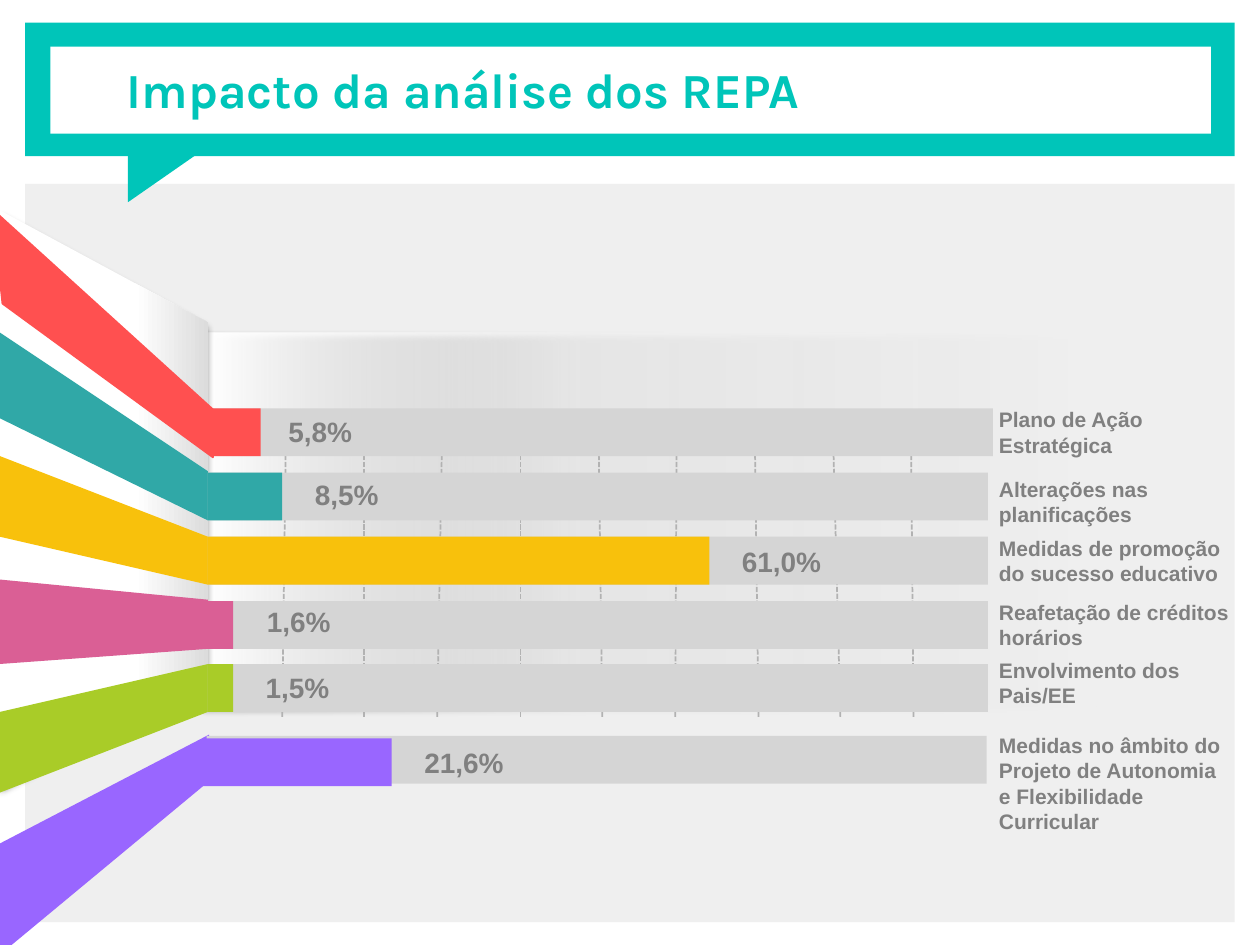
from collections import namedtuple
from dataclasses import dataclass

from lxml.etree import SubElement
from pptx import Presentation
from pptx.dml.color import RGBColor
from pptx.enum.dml import MSO_LINE
from pptx.enum.shapes import MSO_CONNECTOR, MSO_SHAPE
from pptx.enum.text import MSO_ANCHOR
from pptx.oxml import parse_xml
from pptx.oxml.ns import nsdecls, qn
from pptx.util import Inches, Pt


@dataclass(frozen=True)
class Theme:
    teal: str = "00C5B9"
    white: str = "FFFFFF"
    panel: str = "EFEFEF"
    track: str = "D5D5D5"
    fold: str = "DCDCDC"
    grid: str = "B2B2B2"
    text: str = "808080"
    title_font: str = "Karla"
    body_font: str = "Arial"
    title_size: int = 28
    value_size: int = 16
    label_size: int = 12


Row = namedtuple("Row", "label label_box value value_box color track bar ribbon")

BAR_HEIGHT = 0.38
ROWS = [
    Row("Plano de Ação Estratégica", (7.83, 3.18, 2.09, 0.5),
        "5,8%", (2.19, 3.24, 0.71, 0.37), "FF5050",
        (1.69, 3.24, 6.19), (1.67, 3.24, 0.4),
        [(1.69, 3.25), (-0.05, 1.67), (-0.02, 2.04), (0.02, 2.41), (1.69, 3.63)]),
    Row("Alterações nas planificações", (7.83, 3.73, 2.14, 0.5),
        "8,5%", (2.4, 3.74, 0.71, 0.37), "30A8A7",
        (1.65, 3.75, 6.19), (1.65, 3.75, 0.59),
        [(1.65, 3.74), (0, 2.64), (0, 3.32), (1.65, 4.13)]),
    Row("Medidas de promoção do sucesso educativo", (7.83, 4.2, 2.14, 0.5),
        "61,0%", (5.79, 4.27, 0.84, 0.37), "F8C10C",
        (1.65, 4.26, 6.19), (1.65, 4.26, 3.98),
        [(1.65, 4.26), (0, 3.62), (0, 4.26), (1.65, 4.64)]),
    Row("Reafetação de créditos horários", (7.83, 4.71, 2.09, 0.5),
        "1,6%", (2.02, 4.75, 0.71, 0.37), "DA5F95",
        (1.66, 4.77, 6.18), (1.61, 4.77, 0.24),
        [(1.65, 4.76), (0, 4.6), (0, 5.27), (1.65, 5.15)]),
    Row("Envolvimento dos Pais/EE", (7.83, 5.17, 2.09, 0.5),
        "1,5%", (2.01, 5.27, 0.71, 0.37), "A9CC28",
        (1.65, 5.27, 6.19), (1.65, 5.27, 0.2),
        [(1.65, 5.27), (0, 5.65), (0, 6.29), (1.65, 5.65)]),
    Row("Medidas no âmbito do Projeto de Autonomia e Flexibilidade Curricular",
        (7.83, 5.76, 1.97, 0.91),
        "21,6%", (3.27, 5.87, 0.84, 0.37), "9966FF",
        (1.64, 5.84, 6.19), (1.61, 5.86, 1.5),
        [(1.66, 6.2), (-0.04, 7.61), (-0.03, 6.71), (1.66, 5.83)]),
]
GRID_BOTTOMS = [2.24, 2.89, 3.47, 4.13, 4.78, 5.36, 6.02, 6.67, 7.25]
GRID_LEFT, GRID_STEP = 2.27, 0.62


def lengths(values):
    return [Inches(value) for value in values]


class SlideBuilder:
    def __init__(self, slide, theme):
        self.slide = slide
        self.theme = theme

    def finish(self, shape, color):
        shape.shadow.inherit = False
        shape.line.fill.background()
        shape.fill.solid()
        shape.fill.fore_color.rgb = RGBColor.from_string(color)
        return shape

    def block(self, box, color, kind=MSO_SHAPE.RECTANGLE):
        return self.finish(self.slide.shapes.add_shape(kind, *lengths(box)), color)

    def polygon(self, points, color):
        start, *rest = [lengths(point) for point in points]
        builder = self.slide.shapes.build_freeform(*start)
        builder.add_line_segments(rest, close=True)
        return self.finish(builder.convert_to_shape(), color)

    def gradient(self, shape, stops):
        """Fill left to right with (position %, colour, opacity %) stops."""
        marks = "".join(
            f'<a:gs pos="{position * 1000}"><a:srgbClr val="{color}">'
            f'<a:alpha val="{opacity * 1000}"/></a:srgbClr></a:gs>'
            for position, color, opacity in stops)
        properties = shape.element.spPr
        properties.replace(properties.find(qn("a:solidFill")), parse_xml(
            f'<a:gradFill {nsdecls("a")} rotWithShape="1"><a:gsLst>{marks}</a:gsLst>'
            '<a:lin ang="0" scaled="1"/></a:gradFill>'))

    def drop_shadow(self, shape, angle):
        effects = shape.element.spPr.find(qn("a:effectLst"))
        shadow = SubElement(effects, qn("a:outerShdw"), blurRad=str(Pt(4)),
                            dist=str(Pt(3)), dir=str(angle * 60000),
                            algn="t", rotWithShape="0")
        black = SubElement(shadow, qn("a:srgbClr"), val="000000")
        SubElement(black, qn("a:alpha"), val="40000")

    def grid_line(self, start, end):
        line = self.slide.shapes.add_connector(
            MSO_CONNECTOR.STRAIGHT, *lengths(start + end))
        line.line.color.rgb = RGBColor.from_string(self.theme.grid)
        line.line.width = Pt(1)
        line.line.dash_style = MSO_LINE.SQUARE_DOT
        SubElement(line.element.spPr, qn("a:effectLst"))

    def text(self, content, box, *, size, color, font, wrap=True,
             anchor=MSO_ANCHOR.MIDDLE):
        frame = self.slide.shapes.add_textbox(*lengths(box)).text_frame
        frame.word_wrap = wrap
        frame.vertical_anchor = anchor
        run = frame.paragraphs[0].add_run()
        run.text = content
        run.font.name = font
        run.font.size = Pt(size)
        run.font.bold = True
        run.font.color.rgb = RGBColor.from_string(color)


def draw_header(page):
    theme = page.theme
    page.block((0.2, 1.46, 9.6, 5.86), theme.panel)
    page.block((0.2, 0.18, 9.6, 1.06), theme.teal)
    pointer = page.block((1.12, 1.02, 0.48, 0.69), theme.teal, MSO_SHAPE.RIGHT_TRIANGLE)
    pointer.rotation = 90
    page.block((0.4, 0.37, 9.21, 0.69), theme.white)
    page.text("Impacto da análise dos REPA", (0.91, 0.18, 8.7, 1.06),
              size=theme.title_size, color=theme.teal, font=theme.title_font)


def draw_walls(page):
    white = page.theme.white
    back_wall = page.block((1.64, 2.64, 7.06, 2.97), white)
    page.gradient(back_wall, [(0, white, 100), (42, white, 13), (100, white, 0)])
    page.drop_shadow(back_wall, 135)
    side_wall = page.polygon([(1.65, 5.35), (0, 6.24), (0, 1.67), (1.65, 2.56)], white)
    page.gradient(side_wall, [(0, white, 100), (65, white, 100),
                              (100, page.theme.fold, 100)])
    page.drop_shadow(side_wall, 90)


def draw_chart(page):
    theme = page.theme
    first, *middle, last = ROWS
    page.polygon(last.ribbon, last.color)
    draw_walls(page)
    for row in middle:
        page.polygon(row.ribbon, row.color)
    for index, bottom in enumerate(GRID_BOTTOMS):
        page.grid_line((GRID_LEFT + index * GRID_STEP, 3.39), (bottom, 5.69))
    for row in ROWS:
        page.block((*row.track, BAR_HEIGHT), theme.track)
        page.block((*row.bar, BAR_HEIGHT), row.color)
    front_ribbon = page.polygon(first.ribbon, first.color)
    front_ribbon.line.color.rgb = RGBColor.from_string(first.color)
    front_ribbon.line.width = Pt(1)
    for row in ROWS:
        page.text(row.label, row.label_box, size=theme.label_size,
                  color=theme.text, font=theme.body_font)
        page.text(row.value, row.value_box, size=theme.value_size, color=theme.text,
                  font=theme.body_font, wrap=False, anchor=MSO_ANCHOR.TOP)


def main():
    deck = Presentation()
    deck.slide_width, deck.slide_height = Inches(10), Inches(7.5)
    page = SlideBuilder(deck.slides.add_slide(deck.slide_layouts[6]), Theme())
    draw_header(page)
    draw_chart(page)
    deck.save("out.pptx")


if __name__ == "__main__":
    main()
